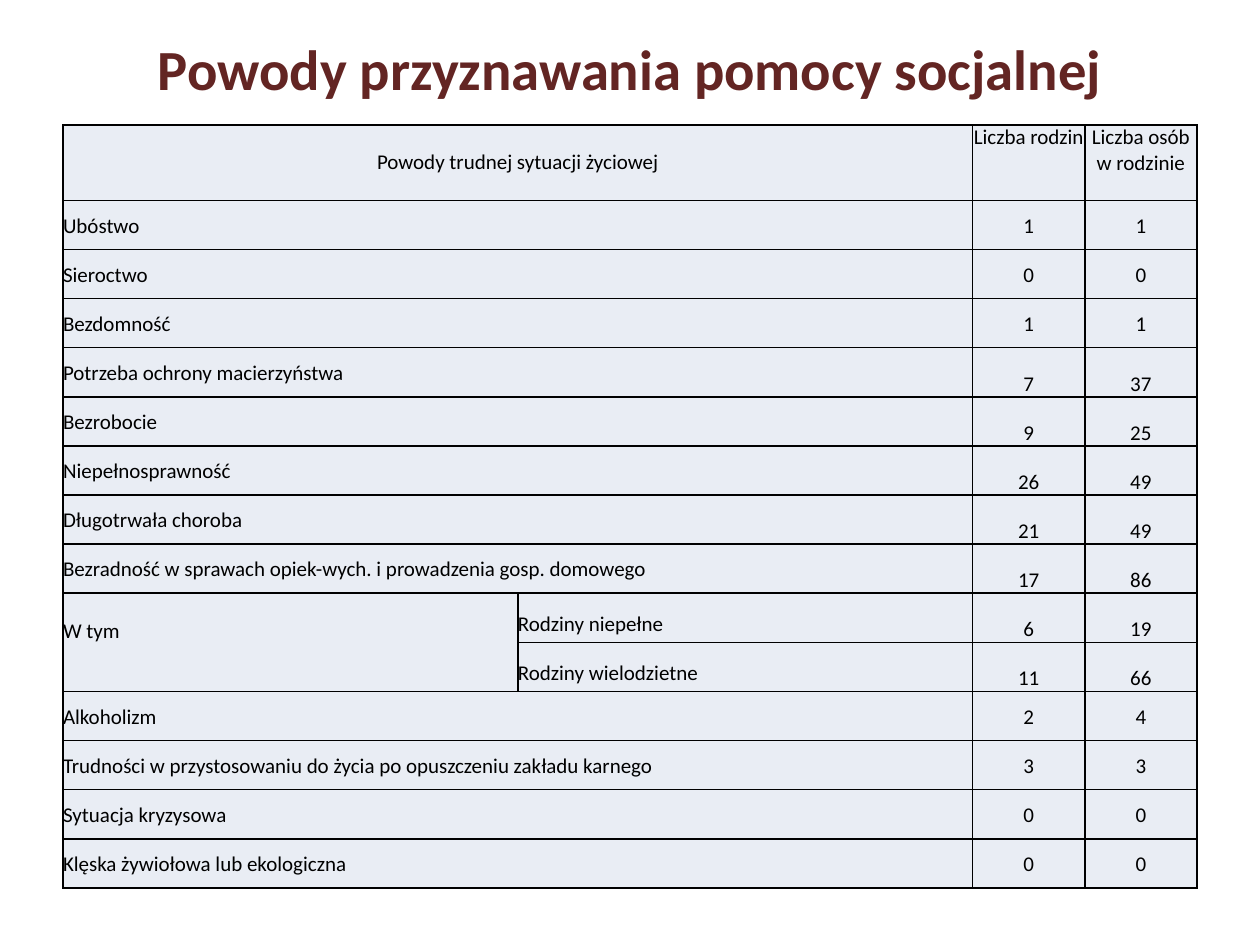
from dataclasses import dataclass

from lxml import etree
from pptx import Presentation
from pptx import util as u
from pptx.dml.color import RGBColor
from pptx.enum import text
from pptx.oxml import ns


@dataclass(frozen=True)
class Theme:
    font: str = "Calibri"
    title_color: str = "632523"
    ink: str = "000000"
    cell_fill: str = "E9EDF4"
    title_size: float = 32.4
    body_size: float = 12
    border_width: float = 1


TITLE = "Powody przyznawania pomocy socjalnej"
HEADER = ("Powody trudnej sytuacji życiowej", "Liczba rodzin", "Liczba osób w rodzinie")
GROUP = "W tym"
# Reason, families, people, vertical anchor of the numbers
TOP, BOTTOM = text.MSO_ANCHOR.TOP, text.MSO_ANCHOR.BOTTOM
REASONS = [
    ("Ubóstwo", 1, 1, TOP),
    ("Sieroctwo", 0, 0, TOP),
    ("Bezdomność", 1, 1, TOP),
    ("Potrzeba ochrony macierzyństwa", 7, 37, BOTTOM),
    ("Bezrobocie", 9, 25, BOTTOM),
    ("Niepełnosprawność", 26, 49, BOTTOM),
    ("Długotrwała choroba", 21, 49, BOTTOM),
    ("Bezradność w sprawach opiek-wych. i prowadzenia gosp. domowego", 17, 86, BOTTOM),
    ("Rodziny niepełne", 6, 19, BOTTOM),
    ("Rodziny wielodzietne", 11, 66, BOTTOM),
    ("Alkoholizm", 2, 4, TOP),
    ("Trudności w przystosowaniu do życia po opuszczeniu zakładu karnego", 3, 3, TOP),
    ("Sytuacja kryzysowa", 0, 0, TOP),
    ("Klęska żywiołowa lub ekologiczna", 0, 0, TOP),
]
GROUP_ROWS = (9, 10)
COLUMN_WIDTHS = (3.61, 3.61, 0.89, 0.89)
HEADER_HEIGHT, ROW_HEIGHT = 0.6, 0.39
LINE_OFFSET = 0.2  # one line of body text


def apply(target, values):
    for name, value in values.items():
        setattr(target, name, value)


class SlideBuilder:
    def __init__(self, slide, theme):
        self.slide, self.theme = slide, theme

    def style_font(self, font, size, color, bold=False):
        apply(font, {"name": self.theme.font, "size": u.Pt(size), "bold": bold})
        font.color.rgb = RGBColor.from_string(color)

    def title(self, wording, left, top, width, height):
        shape = self.slide.shapes.title
        apply(shape, {"left": u.Inches(left), "top": u.Inches(top),
                      "width": u.Inches(width), "height": u.Inches(height)})
        apply(shape.text_frame, {"text": wording, "word_wrap": True,
                                 "auto_size": text.MSO_AUTO_SIZE.NONE,
                                 "vertical_anchor": text.MSO_ANCHOR.MIDDLE})
        paragraph = shape.text_frame.paragraphs[0]
        paragraph.alignment = text.PP_ALIGN.CENTER
        self.style_font(paragraph.runs[0].font, self.theme.title_size,
                        self.theme.title_color, True)

    def table(self, left, top, widths, heights):
        table = self.slide.shapes.add_table(
            len(heights), len(widths), u.Inches(left), u.Inches(top),
            u.Inches(sum(widths)), u.Inches(sum(heights))).table
        apply(table, {"first_row": False, "horz_banding": False})
        for column, width in zip(table.columns, widths):
            column.width = u.Inches(width)
        for row, height in zip(table.rows, heights):
            row.height = u.Inches(height)
        for cell in table.iter_cells():
            apply(cell, {"margin_left": 0, "margin_right": 0,
                         "margin_top": 0, "margin_bottom": 0})
            self.borders(cell)
            cell.fill.solid()
            cell.fill.fore_color.rgb = RGBColor.from_string(self.theme.cell_fill)
        return table

    def borders(self, cell):
        properties = cell._tc.get_or_add_tcPr()
        for side in ("a:lnL", "a:lnR", "a:lnT", "a:lnB"):
            line = etree.SubElement(properties, ns.qn(side),
                                    w=str(u.Pt(self.theme.border_width)))
            fill = etree.SubElement(line, ns.qn("a:solidFill"))
            etree.SubElement(fill, ns.qn("a:srgbClr"), val=self.theme.ink)

    def cell_text(self, cell, wording, centered=False, anchor=TOP, spacing=1.5, offset=0):
        apply(cell, {"text": str(wording), "vertical_anchor": anchor,
                     "margin_top": u.Inches(offset)})
        paragraph = cell.text_frame.paragraphs[0]
        align = text.PP_ALIGN.CENTER if centered else text.PP_ALIGN.LEFT
        apply(paragraph, {"alignment": align, "line_spacing": spacing})
        self.style_font(paragraph.runs[0].font, self.theme.body_size, self.theme.ink)


def main():
    presentation = Presentation()
    apply(presentation, {"slide_width": u.Inches(10), "slide_height": u.Inches(7.5)})
    slide = presentation.slides.add_slide(presentation.slide_layouts[5])
    builder = SlideBuilder(slide, Theme())
    builder.title(TITLE, 0.5, 0.3, 9, 0.48)

    # Grid: reasons span two columns, except in the grouped rows
    heights = [HEADER_HEIGHT] + [ROW_HEIGHT] * len(REASONS)
    table = builder.table(0.5, 0.99, COLUMN_WIDTHS, heights)
    for row in range(len(heights)):
        if row not in GROUP_ROWS:
            table.cell(row, 0).merge(table.cell(row, 1))
    first, last = GROUP_ROWS
    table.cell(first, 0).merge(table.cell(last, 0))

    # Header and group label
    for column, wording, offset in zip((0, 2, 3), HEADER, (LINE_OFFSET, 0, 0)):
        builder.cell_text(table.cell(0, column), wording, True, spacing=1.0, offset=offset)
    builder.cell_text(table.cell(first, 0), GROUP, spacing=1.0, offset=LINE_OFFSET)

    # Reasons with their counts
    for row, (reason, families, people, anchor) in enumerate(REASONS, 1):
        if row in GROUP_ROWS:
            builder.cell_text(table.cell(row, 1), reason, anchor=text.MSO_ANCHOR.MIDDLE)
        else:
            builder.cell_text(table.cell(row, 0), reason)
        for column, count in ((2, families), (3, people)):
            builder.cell_text(table.cell(row, column), count, True, anchor)

    presentation.save("out.pptx")


if __name__ == "__main__":
    main()
